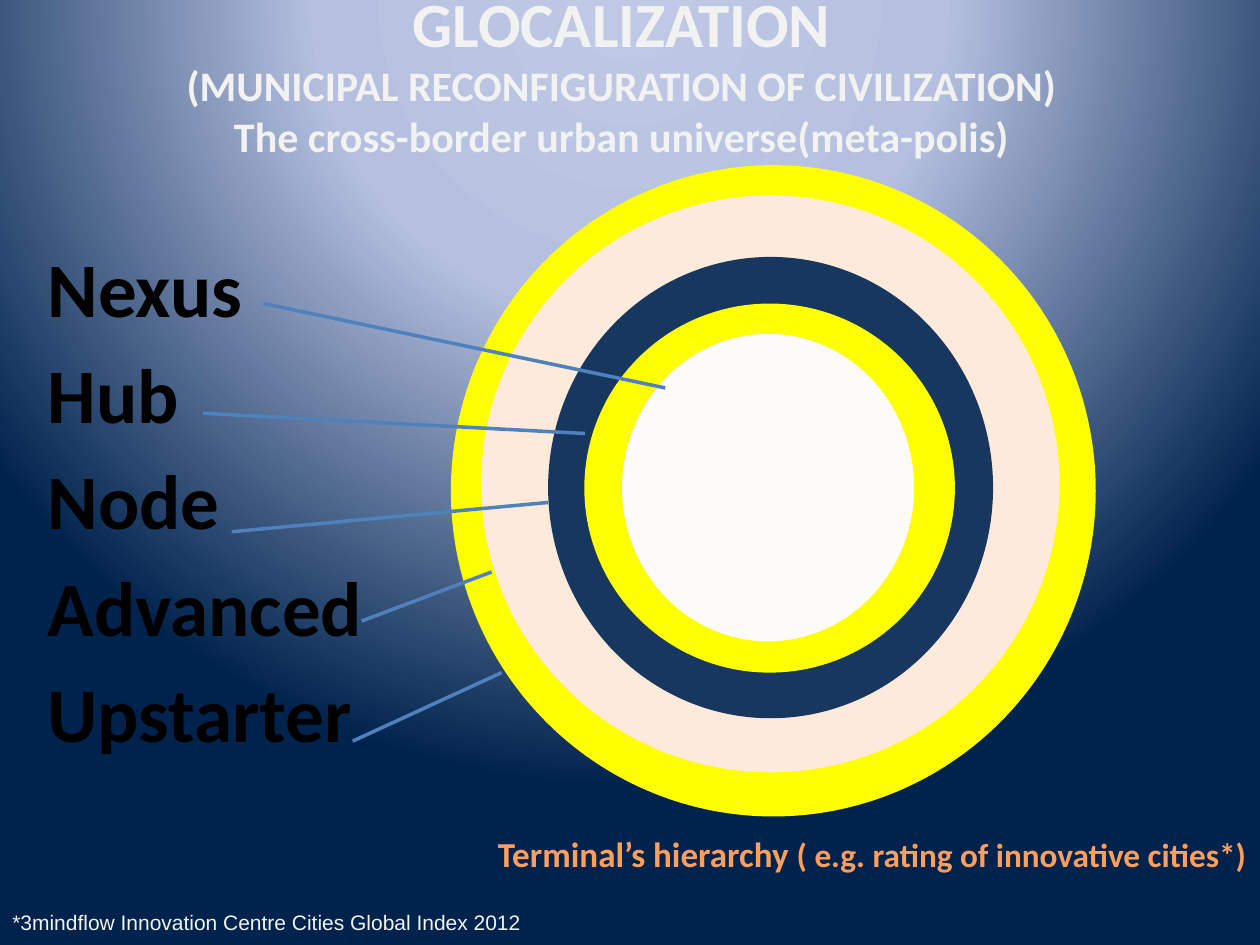
from lxml.etree import SubElement
from pptx import Presentation
from pptx.dml.color import RGBColor
from pptx.enum.shapes import MSO_CONNECTOR, MSO_SHAPE
from pptx.enum.text import MSO_ANCHOR, PP_ALIGN
from pptx.oxml import parse_xml
from pptx.oxml.ns import nsdecls, qn
from pptx.util import Cm, Pt

BACKDROP_STOPS = [(0, "BFC9E5"), (40, "B5C0E0"), (100, "00234D")]
RINGS = [
    (0, 0, 13, 13.13, "FFFF00"),
    (0.61, 0.61, 11.66, 11.63, "FDEADA"),
    (1.96, 1.85, 8.97, 9.3, "17375E"),
    (2.69, 2.79, 7.47, 7.44, "FFFF00"),
    (3.45, 3.4, 5.89, 6.2, "FCFBF9"),
]
TIERS = [
    ("Nexus", (4.6, 1.4), (12.7, 3.1)),
    ("Hub", (3.38, 3.61), (11.08, 4.02)),
    ("Node", (3.96, 6), (10.34, 5.41)),
    ("Advanced", (6.58, 7.8), (9.2, 6.81)),
    ("Upstarter", (6.4, 10.22), (9.4, 8.84)),
]


def rgb(code):
    """Turn a hex string into a colour."""
    return RGBColor.from_string(code)


def style(paragraph, size, color, bold=True, name="Calibri"):
    """Set the font of a whole paragraph."""
    font = paragraph.font
    font.name, font.size, font.bold = name, Pt(size), bold
    font.color.rgb = rgb(color)


def add_frame(slide, left, top, width, height, anchor=MSO_ANCHOR.TOP):
    """Add a wrapping text box and return its text frame."""
    frame = slide.shapes.add_textbox(Cm(left), Cm(top), Cm(width), Cm(height)).text_frame
    frame.word_wrap = True
    frame.vertical_anchor = anchor
    return frame


def paint_backdrop(slide):
    """Fill the background with a circular gradient centred above the slide."""
    slide.background.fill.gradient()
    linear = next(slide.element.iter(qn("a:gradFill")))
    stops = "".join(
        f'<a:gs pos="{position * 1000}"><a:srgbClr val="{color}"/></a:gs>'
        for position, color in BACKDROP_STOPS
    )
    radial = parse_xml(
        f'<a:gradFill {nsdecls("a")} rotWithShape="1"><a:gsLst>{stops}</a:gsLst>'
        '<a:path path="circle"><a:fillToRect l="50000" t="-80000" r="50000" b="180000"/>'
        "</a:path></a:gradFill>"
    )
    linear.getparent().replace(linear, radial)


def add_heading(slide, left, top, width, height):
    """Place the three centred heading lines."""
    frame = add_frame(slide, left, top, width, height, MSO_ANCHOR.MIDDLE)
    frame.margin_bottom = Cm(1.15)
    heading = frame.paragraphs[0]
    heading.alignment = PP_ALIGN.CENTER
    style(heading, 24, "F2F2F2")
    theme = heading.add_run()
    theme.text = "GLOCALIZATION"
    theme.font.size = Pt(36)
    for line in (
        "(MUNICIPAL RECONFIGURATION OF CIVILIZATION)",
        "The cross-border urban universe(meta-polis)",
    ):
        heading.add_line_break()
        heading.add_run().text = line


def add_rings(slide, left, top):
    """Stack the rings from the outermost to the core."""
    for x, y, width, height, color in RINGS:
        ring = slide.shapes.add_shape(
            MSO_SHAPE.OVAL, Cm(left + x), Cm(top + y), Cm(width), Cm(height)
        )
        ring.shadow.inherit = False
        ring.fill.solid()
        ring.fill.fore_color.rgb = rgb(color)
        ring.line.fill.background()


def add_tiers(slide, left, top, width, height):
    """List the tiers and lead each one to its ring."""
    frame = add_frame(slide, left, top, width, height)
    for index, (tier, start, end) in enumerate(TIERS):
        label = frame.add_paragraph() if index else frame.paragraphs[0]
        label.text = tier
        label.space_before = Pt(8)
        style(label, 44, "000000")
        leader = slide.shapes.add_connector(
            MSO_CONNECTOR.STRAIGHT,
            Cm(left + start[0]), Cm(top + start[1]),
            Cm(left + end[0]), Cm(top + end[1]),
        )
        leader.line.color.rgb = rgb("4F81BD")
        leader.line.width = Pt(2)
        SubElement(leader.element.spPr, qn("a:effectLst"))


def add_footnote(slide, left, top, width, height):
    """Place the note on the ranking."""
    note = add_frame(slide, left, top, width, height, MSO_ANCHOR.MIDDLE).paragraphs[0]
    note.text = "*3mindflow Innovation Centre Cities Global Index 2012"
    style(note, 12, "F2F2F2", bold=False, name="Arial")


def add_caption(slide, left, top, width, height):
    """Place the right-aligned caption under the rings."""
    caption = add_frame(slide, left, top, width, height).paragraphs[0]
    caption.alignment = PP_ALIGN.RIGHT
    style(caption, 20, "FF9F5D")
    caption.add_run().text = "Terminal’s hierarchy "
    example = caption.add_run()
    example.text = "( e.g. rating of innovative cities*)"
    example.font.size = Pt(19)


def main():
    """Build and save the slide."""
    deck = Presentation()
    deck.slide_width, deck.slide_height = Cm(25.4), Cm(19.05)
    slide = deck.slides.add_slide(deck.slide_layouts[6])
    paint_backdrop(slide)
    add_heading(slide, -1.07, 0.91, 27.2, 2.13)
    add_rings(slide, 9.09, 3.33)
    add_tiers(slide, 0.71, 4.72, 8.2, 12.6)
    add_footnote(slide, 0, 18.14, 12.9, 0.91)
    add_caption(slide, 2.36, 16.66, 23.01, 1.12)
    deck.save("out.pptx")


if __name__ == "__main__":
    main()
